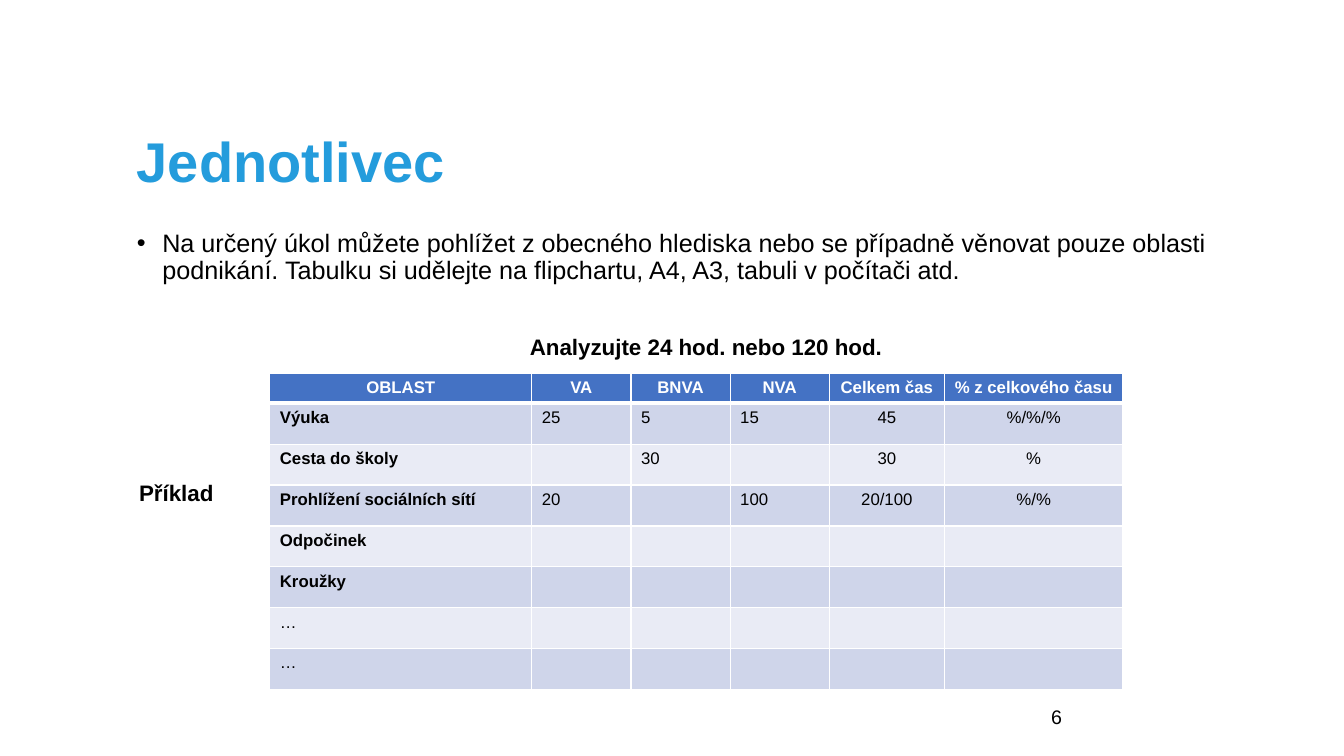
from lxml.etree import SubElement
from pptx import Presentation
from pptx.dml.color import RGBColor
from pptx.enum.text import MSO_ANCHOR, PP_ALIGN
from pptx.oxml.ns import qn
from pptx.util import Cm, Pt

BLACK = RGBColor(0x00, 0x00, 0x00)
WHITE = RGBColor(0xFF, 0xFF, 0xFF)
TITLE_BLUE = RGBColor(0x24, 0x9C, 0xDC)
HEADER_BLUE = RGBColor(0x44, 0x72, 0xC4)
DARK_BAND = RGBColor(0xCF, 0xD5, 0xEA)
LIGHT_BAND = RGBColor(0xE9, 0xEB, 0xF5)

COLUMN_WIDTHS = [6.6, 2.5, 2.5, 2.5, 2.9, 4.5]
HEADER_HEIGHT, ROW_HEIGHT = 0.75, 1.03
FIRST_CENTERED_COLUMN = 4
ACTIVITIES = [
    ["OBLAST", "VA", "BNVA", "NVA", "Celkem čas", "% z celkového času"],
    ["Výuka", "25", "5", "15", "45", "%/%/%"],
    ["Cesta do školy", "", "30", "", "30", "%"],
    ["Prohlížení sociálních sítí", "20", "", "100", "20/100", "%/%"],
    ["Odpočinek", "", "", "", "", ""],
    ["Kroužky", "", "", "", "", ""],
    ["…", "", "", "", "", ""],
    ["…", "", "", "", "", ""],
]


class SlideBuilder:
    """Adds consistently styled text and tables to one slide."""

    font_name = "Arial"

    def __init__(self, presentation):
        self.slide = presentation.slides.add_slide(presentation.slide_layouts[6])

    def add_styled_run(self, paragraph, text, size, color=BLACK, bold=False, **paragraph_format):
        for name, value in paragraph_format.items():
            setattr(paragraph, name, value)
        run = paragraph.add_run()
        run.text = text
        font_format = {"name": self.font_name, "size": Pt(size), "bold": bold}
        for name, value in font_format.items():
            setattr(run.font, name, value)
        run.font.color.rgb = color

    def add_text(self, box, text, size, anchor=MSO_ANCHOR.TOP, bullet=False, **text_format):
        shape = self.slide.shapes.add_textbox(*map(Cm, box))
        frame_format = {"word_wrap": True, "vertical_anchor": anchor}
        for name, value in frame_format.items():
            setattr(shape.text_frame, name, value)
        paragraph = shape.text_frame.paragraphs[0]
        if bullet:
            self.add_bullet(paragraph)
        self.add_styled_run(paragraph, text, size, **text_format)

    def add_bullet(self, paragraph):
        properties = paragraph._p.get_or_add_pPr()
        indent = Cm(0.64)
        properties.set("marL", str(indent))
        properties.set("indent", str(-indent))
        SubElement(properties, qn("a:buFont"), typeface=self.font_name)
        SubElement(properties, qn("a:buChar"), char="•")

    def add_borders(self, cell, widths):
        properties = cell._tc.get_or_add_tcPr()
        for side, width in widths.items():
            line = SubElement(properties, qn(f"a:ln{side}"), w=str(Pt(width)))
            fill = SubElement(line, qn("a:solidFill"))
            SubElement(fill, qn("a:srgbClr"), val=str(WHITE))

    def add_table(self, left, top, rows):
        heights = [HEADER_HEIGHT] + [ROW_HEIGHT] * (len(rows) - 1)
        size = Cm(sum(COLUMN_WIDTHS)), Cm(sum(heights))
        shape = self.slide.shapes.add_table(
            len(rows), len(COLUMN_WIDTHS), Cm(left), Cm(top), *size)
        table = shape.table
        for column, width in zip(table.columns, COLUMN_WIDTHS):
            column.width = Cm(width)
        for row_index, values in enumerate(rows):
            table.rows[row_index].height = Cm(heights[row_index])
            for column_index, text in enumerate(values):
                self.fill_cell(table.cell(row_index, column_index), row_index, column_index, text)

    def fill_cell(self, cell, row_index, column_index, text):
        header = row_index == 0
        widths = {"L": 1, "R": 1, "T": 3 if row_index == 1 else 1, "B": 3 if header else 1}
        self.add_borders(cell, widths)
        band = DARK_BAND if row_index % 2 else LIGHT_BAND
        cell.fill.solid()
        cell.fill.fore_color.rgb = HEADER_BLUE if header else band
        centered = header or column_index >= FIRST_CENTERED_COLUMN
        self.add_styled_run(
            cell.text_frame.paragraphs[0], text, 12,
            color=WHITE if header else BLACK,
            bold=header or (column_index == 0 and text != "…"),
            alignment=PP_ALIGN.CENTER if centered else PP_ALIGN.LEFT)


def main():
    presentation = Presentation()
    presentation.slide_width, presentation.slide_height = Cm(33.87), Cm(19.05)
    builder = SlideBuilder(presentation)
    label_format = {"size": 16, "bold": True, "alignment": PP_ALIGN.CENTER}
    builder.add_text(
        (3.2, 2.13, 25.1, 4.01), "Jednotlivec", 40, anchor=MSO_ANCHOR.MIDDLE,
        color=TITLE_BLUE, bold=True, line_spacing=0.9)
    builder.add_text(
        (3.2, 5.69, 28.4, 10.44),
        "Na určený úkol můžete pohlížet z obecného hlediska nebo se případně věnovat "
        "pouze oblasti podnikání. Tabulku si udělejte na flipchartu, A4, A3, tabuli "
        "v počítači atd.",
        18, bullet=True, line_spacing=0.9)
    builder.add_text((26.24, 17.65, 7.62, 1.02), "6", 14)
    builder.add_text((12.7, 8.26, 10.19, 0.94), "Analyzujte 24 hod. nebo 120 hod.", **label_format)
    builder.add_table(6.8, 9.4, ACTIVITIES)
    builder.add_text((2.39, 11.96, 4.11, 0.94), "Příklad", **label_format)
    presentation.save("out.pptx")


if __name__ == "__main__":
    main()
